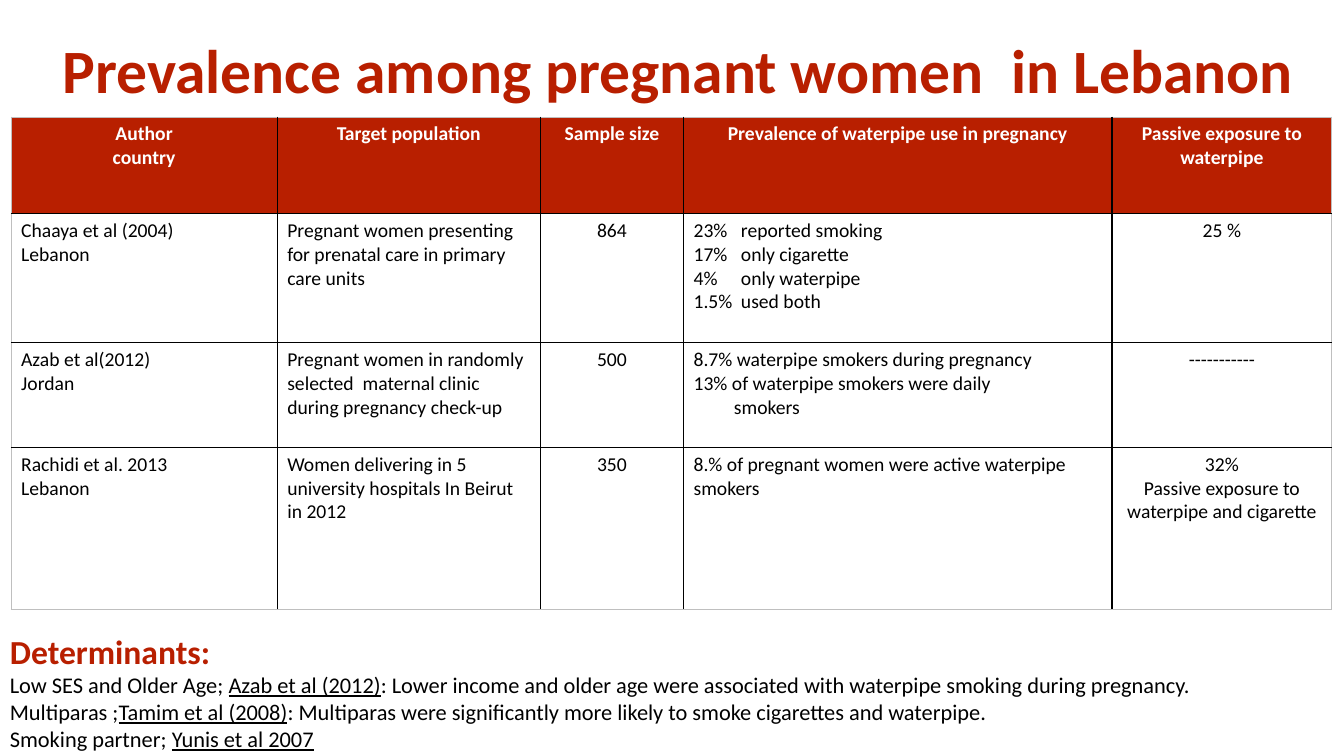
from lxml.etree import SubElement
from pptx import Presentation
from pptx.dml.color import RGBColor
from pptx.enum.text import MSO_ANCHOR, PP_ALIGN
from pptx.oxml.ns import qn
from pptx.util import Inches, Pt

RED, BLACK, WHITE, GREY = "B81F00", "000000", "FFFFFF", "BFBFBF"


def rgb(value):
    return RGBColor.from_string(value)


def add_run(p, text, color, **formats):
    r = p.add_run()
    r.text = text
    r.font.name = "Calibri"
    r.font.color.rgb = rgb(color)
    for name, value in formats.items():
        setattr(r.font, name, value)


prs = Presentation()
prs.slide_width, prs.slide_height = Inches(13.33), Inches(7.5)
s = prs.slides.add_slide(prs.slide_layouts[6])

tf = s.shapes.add_textbox(Inches(0.52), Inches(0), Inches(12.52), Inches(1.45)).text_frame
tf.word_wrap = True
tf.vertical_anchor = MSO_ANCHOR.MIDDLE
p = tf.paragraphs[0]
p.line_spacing = 0.9
add_run(p, "Prevalence among pregnant women  in Lebanon", RED, size=Pt(44), bold=True)

studies = [
    ["Author\ncountry", "Target population", "Sample size",
     "Prevalence of waterpipe use in pregnancy", "Passive exposure to waterpipe"],
    ["Chaaya et al (2004)\nLebanon",
     "Pregnant women presenting for prenatal care in primary care units", "864",
     "23%\treported smoking\n17%\tonly cigarette\n4%\tonly waterpipe\n1.5%\tused both", "25 %"],
    ["Azab et al(2012)\nJordan",
     "Pregnant women in randomly selected  maternal clinic during pregnancy check-up", "500",
     "8.7% waterpipe smokers during pregnancy\n13% of waterpipe smokers were daily\nsmokers",
     "-----------"],
    ["Rachidi et al. 2013\nLebanon",
     "Women delivering in 5 university hospitals In Beirut in 2012", "350",
     "8.% of pregnant women were active waterpipe smokers",
     "32%\nPassive exposure to waterpipe and cigarette"],
]
widths = [2.64, 2.61, 1.42, 4.25, 2.18]
heights = [0.96, 1.28, 1.04, 1.61]
last_row, last_col = len(heights) - 1, len(widths) - 1

table = s.shapes.add_table(len(heights), len(widths), Inches(0.11), Inches(1.16),
                           Inches(sum(widths)), Inches(sum(heights))).table
table.first_row = table.horz_banding = False
for column, width in zip(table.columns, widths):
    column.width = Inches(width)
for row, height in zip(table.rows, heights):
    row.height = Inches(height)

for i, texts in enumerate(studies):
    for j, text in enumerate(texts):
        cell = table.cell(i, j)
        header = i == 0
        tcPr = cell._tc.get_or_add_tcPr()
        outer = {"a:lnL": j == 0, "a:lnR": j == last_col, "a:lnT": i == 0, "a:lnB": i == last_row}
        for tag, edge in outer.items():
            ln = SubElement(tcPr, qn(tag), w=str(Pt(0.5 if edge else 1)))
            fill = SubElement(ln, qn("a:solidFill"))
            SubElement(fill, qn("a:srgbClr"), val=GREY if edge else BLACK)
        if header:
            cell.fill.solid()
            cell.fill.fore_color.rgb = rgb(RED)
        else:
            cell.fill.background()
        tf = cell.text_frame
        for n, line in enumerate(text.split("\n")):
            p = tf.add_paragraph() if n else tf.paragraphs[0]
            p.alignment = PP_ALIGN.CENTER if header or j in (2, 4) else PP_ALIGN.LEFT
            add_run(p, line, WHITE if header else BLACK, size=Pt(14), bold=header)
            pPr = p._p.get_or_add_pPr()
            if "\t" in line:
                tabs = SubElement(pPr, qn("a:tabLst"))
                SubElement(tabs, qn("a:tab"), pos=str(Inches(0.47)), algn="l")
            if line == "smokers":
                pPr.set("marL", str(Inches(0.4)))

determinants = [
    ("Low SES and Older Age; ", "Azab et al (2012)",
     ": Lower income and older age were associated with waterpipe smoking during pregnancy."),
    ("Multiparas ;", "Tamim et al (2008)",
     ": Multiparas were significantly more likely to smoke cigarettes and waterpipe."),
    ("Smoking partner; ", "Yunis et al 2007"),
]
tf = s.shapes.add_textbox(Inches(0), Inches(6.21), Inches(13.2), Inches(1.31)).text_frame
tf.word_wrap = True
add_run(tf.paragraphs[0], "Determinants:", RED, size=Pt(24), bold=True)
for parts in determinants:
    p = tf.add_paragraph()
    for n, part in enumerate(parts):
        add_run(p, part, BLACK, size=Pt(16), underline=n == 1)

prs.save("out.pptx")
